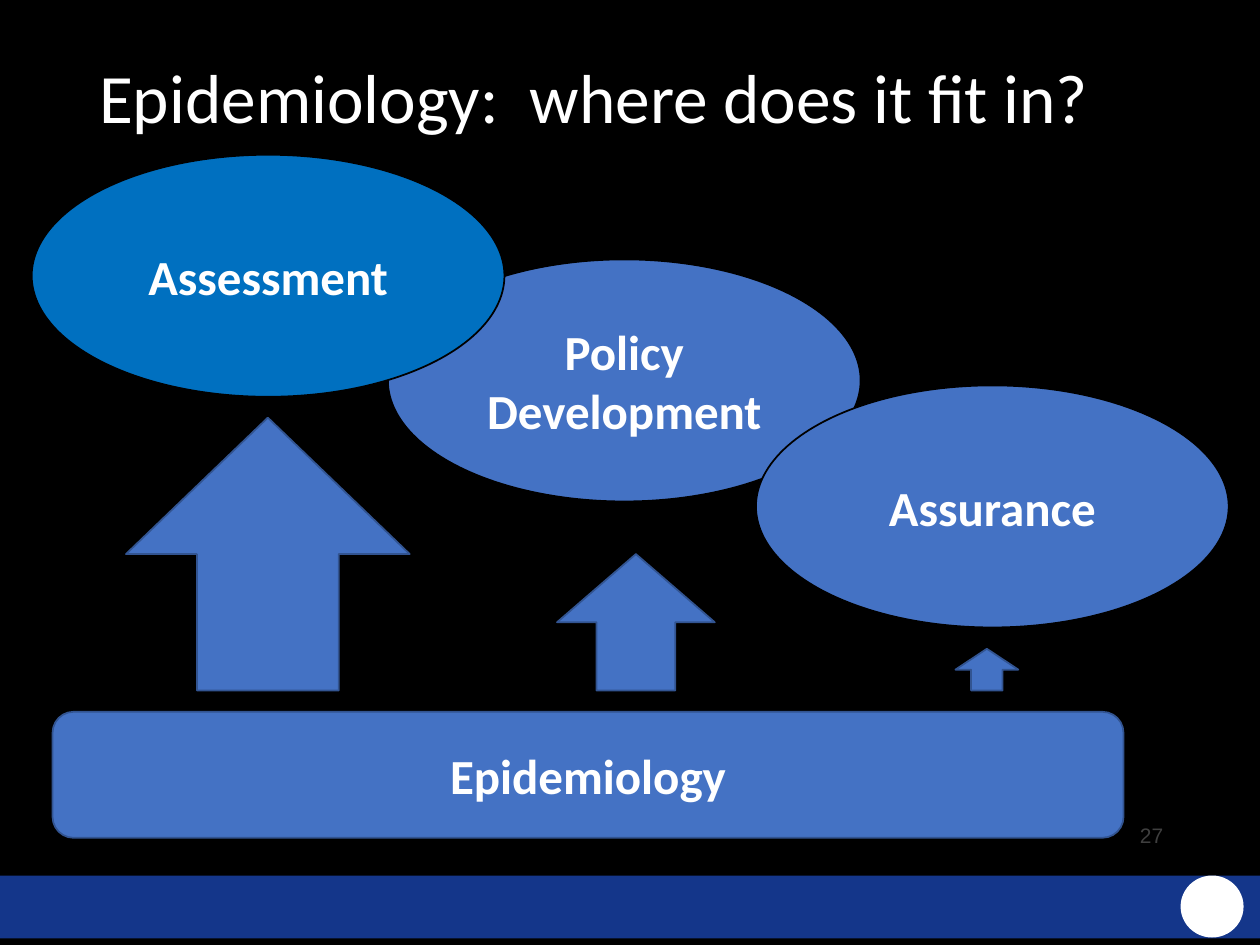
"""Build a slide showing how epidemiology supports the public health functions."""
from dataclasses import dataclass
from typing import Optional

from pptx import Presentation
from pptx.dml.color import RGBColor as RGB
from pptx.enum.shapes import MSO_SHAPE as Shape
from pptx.enum.text import MSO_ANCHOR as Anchor, PP_ALIGN as Align
from pptx.util import Cm, Pt


@dataclass(frozen=True)
class Theme:
    background: RGB = RGB(0x00, 0x00, 0x00)
    band: RGB = RGB(0x14, 0x36, 0x8A)
    blue: RGB = RGB(0x44, 0x72, 0xC4)
    highlight: RGB = RGB(0x00, 0x70, 0xC0)
    edge: RGB = RGB(0x32, 0x54, 0x91)
    white: RGB = RGB(0xFF, 0xFF, 0xFF)
    grey: RGB = RGB(0x3F, 0x3F, 0x3F)
    title_size: float = 39.6
    label_size: float = 28
    number_size: float = 12
    font: str = "Calibri"
    number_font: str = "Arial"


@dataclass(frozen=True)
class Box:
    left: float
    top: float
    width: float
    height: float

    def lengths(self) -> tuple:
        return Cm(self.left), Cm(self.top), Cm(self.width), Cm(self.height)


@dataclass(frozen=True)
class Function:
    label: str
    left: float
    top: float
    fill: RGB


@dataclass(frozen=True)
class Arrow:
    left: float
    width: float
    height: float


THEME = Theme()
OVAL_WIDTH, OVAL_HEIGHT = 9.53, 4.88
ARROW_BASE = 13.92
FUNCTIONS = (
    Function("Policy Development", 7.82, 5.23, THEME.blue),
    Function("Assessment", 0.64, 3.12, THEME.highlight),
    Function("Assurance", 15.24, 7.77, THEME.blue),
)
ARROWS = (
    Arrow(2.54, 5.72, 5.5),
    Arrow(11.23, 3.18, 2.75),
    Arrow(19.26, 1.27, 0.84),
)


def write(sp, text: str, size: float, color: RGB, align: Align,
          font: str = THEME.font, bold: bool = False) -> None:
    """Put one formatted run into a shape, centred vertically."""
    tf = sp.text_frame
    tf.word_wrap = True
    tf.vertical_anchor = Anchor.MIDDLE
    p = tf.paragraphs[0]
    p.alignment = align
    r = p.add_run()
    r.text = text
    r.font.name, r.font.size, r.font.bold = font, Pt(size), bold
    r.font.color.rgb = color


def add_block(s, kind: Shape, box: Box, fill: RGB,
              line: Optional[RGB] = None, label: str = "") -> None:
    """Draw a filled shape with an optional outline and bold label."""
    sp = s.shapes.add_shape(kind, *box.lengths())
    sp.shadow.inherit = False
    sp.fill.solid()
    sp.fill.fore_color.rgb = fill
    if line is None:
        sp.line.fill.background()
    else:
        sp.line.color.rgb = line
        sp.line.width = Pt(1)
    if label:
        write(sp, label, THEME.label_size, THEME.white, Align.CENTER, bold=True)


def main() -> None:
    """Create the presentation and save it."""
    prs = Presentation()
    prs.slide_width, prs.slide_height = Cm(25.4), Cm(19.05)
    s = prs.slides.add_slide(prs.slide_layouts[6])
    s.background.fill.solid()
    s.background.fill.fore_color.rgb = THEME.background

    add_block(s, Shape.RECTANGLE, Box(0, 17.65, 25.4, 1.27), THEME.band)
    add_block(s, Shape.OVAL, Box(23.8, 17.65, 1.27, 1.25), THEME.white)

    title = s.shapes.add_textbox(*Box(1.75, 1.02, 21.9, 2.03).lengths())
    write(title, "Epidemiology:  where does it fit in?", THEME.title_size,
          THEME.white, Align.LEFT)
    title.text_frame.paragraphs[0].line_spacing = 0.9
    number = s.shapes.add_textbox(*Box(17.98, 16.33, 5.72, 1.02).lengths())
    write(number, "27", THEME.number_size, THEME.grey, Align.RIGHT,
          THEME.number_font)

    for f in FUNCTIONS:
        add_block(s, Shape.OVAL, Box(f.left, f.top, OVAL_WIDTH, OVAL_HEIGHT),
                  f.fill, THEME.background, f.label)
    add_block(s, Shape.ROUNDED_RECTANGLE, Box(1.06, 14.35, 21.59, 2.54),
              THEME.blue, THEME.edge, "Epidemiology")
    for a in ARROWS:
        add_block(s, Shape.UP_ARROW,
                  Box(a.left, ARROW_BASE - a.height, a.width, a.height),
                  THEME.blue, THEME.edge)

    prs.save("out.pptx")


if __name__ == "__main__":
    main()
